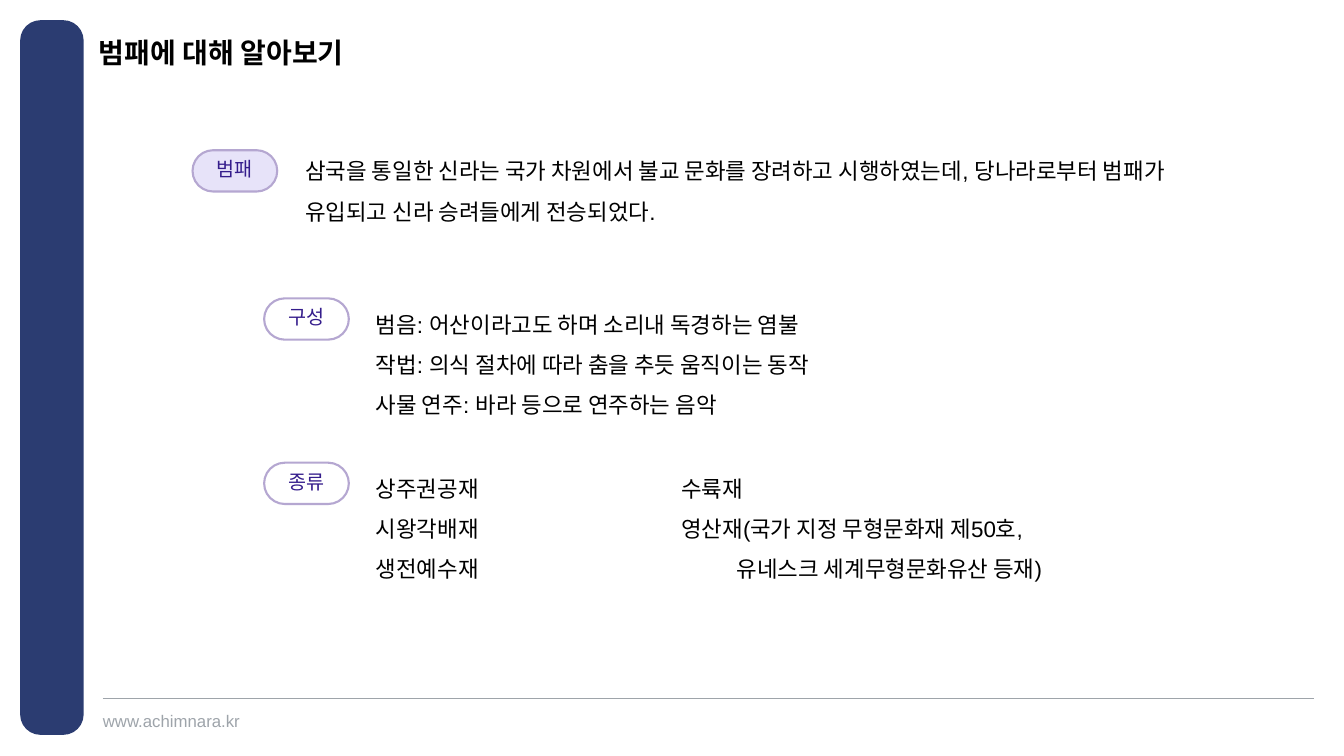
import pptx
import pptx.util
import pptx.dml.color
import pptx.enum.shapes
import pptx.enum.text
import lxml.etree

Inches = pptx.util.Inches
Pt = pptx.util.Pt
RGBColor = pptx.dml.color.RGBColor
MSO_SHAPE = pptx.enum.shapes.MSO_SHAPE
PP_ALIGN = pptx.enum.text.PP_ALIGN
MSO_ANCHOR = pptx.enum.text.MSO_ANCHOR
MSO_AUTO_SIZE = pptx.enum.text.MSO_AUTO_SIZE

NAVY = RGBColor(0x2B, 0x3C, 0x71)
GRAY = RGBColor(0x9E, 0xA4, 0xAA)
BLACK = RGBColor(0x00, 0x00, 0x00)
LAVENDER = RGBColor(0xE7, 0xE3, 0xF9)
LILAC = RGBColor(0xB5, 0xA7, 0xD1)
VIOLET = RGBColor(0x35, 0x1D, 0x8C)


def set_text(tf, text, font, size, color, spacing=1.0, align=PP_ALIGN.LEFT, bold=False):
    tf.text = text
    for p in tf.paragraphs:
        p.alignment = align
        p.line_spacing = spacing
        for r in p.runs:
            r.font.name = font
            r.font.size = Pt(size)
            r.font.bold = bold
            r.font.color.rgb = color


def clear_margins(tf):
    tf.margin_left = tf.margin_top = tf.margin_right = tf.margin_bottom = 0


prs = pptx.Presentation()
prs.slide_width = Inches(13.33)
prs.slide_height = Inches(7.5)
s = prs.slides.add_slide(prs.slide_layouts[5])

sidebar = s.shapes.add_shape(MSO_SHAPE.ROUNDED_RECTANGLE, Inches(0.2), Inches(0.2), Inches(0.63), Inches(7.09))
sidebar.adjustments[0] = 0.32
sidebar.shadow.inherit = False
sidebar.fill.solid()
sidebar.fill.fore_color.rgb = NAVY
sidebar.line.fill.background()

rule = s.shapes.add_connector(
    pptx.enum.shapes.MSO_CONNECTOR.STRAIGHT, Inches(1.02), Inches(6.93), Inches(13.03), Inches(6.93)
)
rule.line.color.rgb = GRAY
rule.line.width = Pt(0.5)
lxml.etree.SubElement(rule._element.spPr, pptx.oxml.ns.qn("a:effectLst"))

footer = s.shapes.add_textbox(Inches(1.02), Inches(7.05), Inches(1.5), Inches(0.2))
clear_margins(footer.text_frame)
footer.text_frame.word_wrap = True
set_text(footer.text_frame, "www.achimnara.kr", "Arial", 12, GRAY)

title = s.shapes.title
title.left, title.top, title.width, title.height = Inches(0.98), Inches(0.39), Inches(7.87), Inches(0.28)
clear_margins(title.text_frame)
title.text_frame.vertical_anchor = MSO_ANCHOR.TOP
title.text_frame.auto_size = MSO_AUTO_SIZE.NONE
set_text(title.text_frame, "범패에 대해 알아보기", "Arial", 20, BLACK, spacing=0.9, bold=True)

pills = [("범패", 1.91, 1.49, LAVENDER), ("구성", 2.62, 2.96, None), ("종류", 2.62, 4.59, None)]
for label, left, top, fill in pills:
    sp = s.shapes.add_shape(MSO_SHAPE.ROUNDED_RECTANGLE, Inches(left), Inches(top), Inches(0.84), Inches(0.41))
    sp.adjustments[0] = 0.5
    sp.shadow.inherit = False
    if fill is None:
        sp.fill.background()
    else:
        sp.fill.solid()
        sp.fill.fore_color.rgb = fill
    sp.line.color.rgb = LILAC
    sp.line.width = Pt(1.5)
    sp.text_frame.vertical_anchor = MSO_ANCHOR.BOTTOM
    set_text(sp.text_frame, label, "Noto Sans CJK KR", 14, VIOLET, spacing=1.5, align=PP_ALIGN.CENTER)

passages = [
    (2.93, 1.38, 9.12, 0.86, [
        "삼국을 통일한 신라는 국가 차원에서 불교 문화를 장려하고 시행하였는데, "
        "당나라로부터 범패가 유입되고 신라 승려들에게 전승되었다.",
    ]),
    (3.63, 2.9, 5.74, 1.26, [
        "범음: 어산이라고도 하며 소리내 독경하는 염불",
        "작법: 의식 절차에 따라 춤을 추듯 움직이는 동작",
        "사물 연주: 바라 등으로 연주하는 음악",
    ]),
    (3.63, 4.53, 2.9, 1.26, ["상주권공재", "시왕각배재", "생전예수재"]),
    (6.66, 4.53, 5.74, 1.26, [
        "수륙재",
        "영산재(국가 지정 무형문화재 제50호,",
        "유네스크 세계무형문화유산 등재)",
    ]),
]
for left, top, width, height, lines in passages:
    passage = s.shapes.add_textbox(Inches(left), Inches(top), Inches(width), Inches(height))
    tf = passage.text_frame
    tf.word_wrap = True
    tf.auto_size = MSO_AUTO_SIZE.SHAPE_TO_FIT_TEXT
    set_text(tf, "\n".join(lines), "Arial", 16, BLACK, spacing=1.5)

heritage_note = tf.paragraphs[-1]
heritage_note._p.get_or_add_pPr().set("marL", str(Inches(0.55)))

prs.save("out.pptx")
